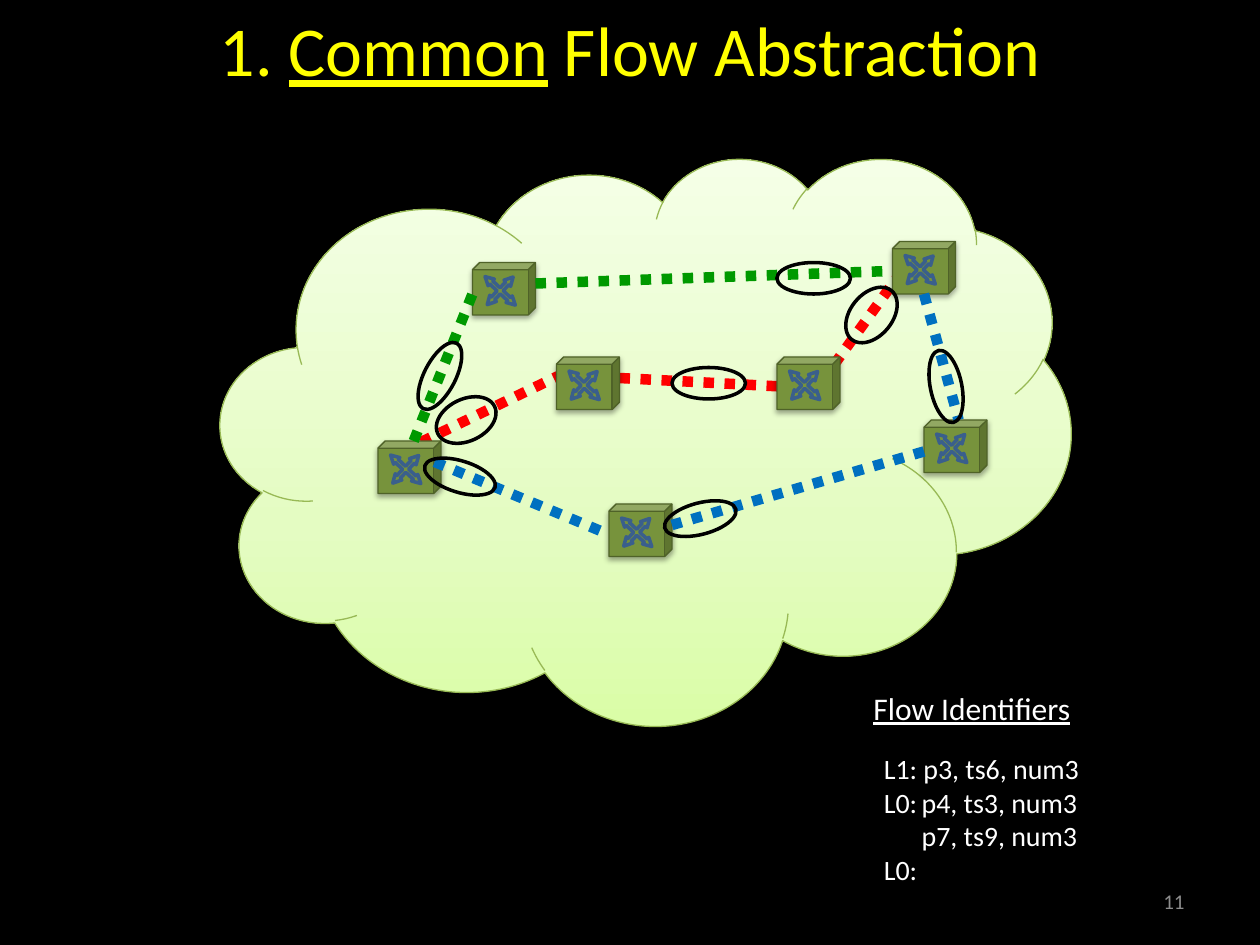
from lxml.etree import SubElement
from pptx import Presentation
from pptx.dml.color import RGBColor
from pptx.enum.dml import MSO_LINE
from pptx.enum.shapes import MSO_CONNECTOR, MSO_SHAPE
from pptx.enum.text import MSO_ANCHOR, PP_ALIGN
from pptx.oxml import parse_xml
from pptx.oxml.ns import nsdecls, qn
from pptx.util import Inches, Pt

# The slide is a grid of 120 columns by 90 rows, twelve to the inch.
COLUMNS, ROWS, PER_INCH = 120, 90, 12
FONT = "Calibri"
COLORS = {
    "background": "000000", "title": "FFFF00", "text": "FFFFFF", "number": "8C8C8C",
    "cloud_low": "DAFDA7", "cloud_mid": "E4FCC2", "cloud_high": "F5FFE7",
    "cloud_edge": "98B955", "switch": "77933C", "switch_edge": "4F6228",
    "arrows": "3A5F8C", "ring": "000000",
    "red": "FF0000", "green": "009900", "blue": "0070C0",
}
SWITCHES = [(36, 42), (85, 23), (74, 34), (53, 34), (45, 25), (58, 48), (88, 40)]
SWITCH_SIZE = (6, 5)
RED_LINKS = [
    ("red", (40.1, 42.1), (53.2, 35.8)),
    ("red", (59, 36), (74.2, 36.8)),
    ("red", (85.9, 25.8), (79.1, 35.2)),
]
OUTER_LINKS = [
    ("green", (39.4, 42), (45, 28)),
    ("blue", (41.4, 44), (58, 50.9)),
    ("green", (51, 27), (85, 25.8)),
    ("blue", (88, 43), (64, 50)),
    ("blue", (88, 28), (91.3, 40)),
]
NARROW, WIDE = (7, 3), (6, 4)
RINGS = [  # centre, size, rotation
    ((44.4, 40), WIDE, 334.5),
    ((67.5, 36.5), NARROW, 0),
    ((83, 30), WIDE, 309.3),
    ((77.5, 26.5), NARROW, 0),
    ((41.9, 35.8), NARROW, 297.1),
    ((90.1, 36.8), NARROW, 258.5),
    ((66.7, 49.4), NARROW, 345.3),
    ((43.8, 45.4), NARROW, 17.1),
]


def grid(*cells):
    return [Inches(cell / PER_INCH) for cell in cells]


def rgb(name):
    return RGBColor.from_string(COLORS[name])


def style_runs(frame, size, color):
    for paragraph in frame.paragraphs:
        for run in paragraph.runs:
            run.font.name, run.font.size = FONT, Pt(size)
            run.font.color.rgb = rgb(color)


def add_outlined(shapes, preset, box, edge, width, fill=None):
    shape = shapes.add_shape(preset, *grid(*box))
    shape.shadow.inherit = False
    if fill:
        shape.fill.solid()
        shape.fill.fore_color.rgb = rgb(fill)
    else:
        shape.fill.background()
    shape.line.color.rgb = rgb(edge)
    shape.line.width = Pt(width)
    return shape


def add_shadow(shape, opacity):
    effects = shape._element.spPr.find(qn("a:effectLst"))
    effects.append(parse_xml(
        f'<a:outerShdw {nsdecls("a")} blurRad="{Pt(3.1)}" dist="{Pt(1.7)}" dir="5400000" '
        f'rotWithShape="0"><a:srgbClr val="000000"><a:alpha val="{opacity * 1000}"/>'
        '</a:srgbClr></a:outerShdw>'))


def add_title(slide, box):
    title = slide.shapes.title
    title.left, title.top, title.width, title.height = grid(*box)
    frame = title.text_frame
    frame.vertical_anchor = MSO_ANCHOR.TOP
    heading = frame.paragraphs[0]
    heading.alignment = PP_ALIGN.CENTER
    for words in ("1. ", "Common", " Flow Abstraction"):
        run = heading.add_run()
        run.text = words
        run.font.underline = words == "Common"
    style_runs(frame, 40, "title")


def add_cloud(slide, box):
    cloud = add_outlined(slide.shapes, MSO_SHAPE.CLOUD, box, "cloud_edge", 0.75)
    cloud.fill.gradient()
    cloud.fill.gradient_angle = 90
    stops = cloud._element.spPr.find(qn("a:gradFill")).find(qn("a:gsLst"))
    for stop in list(stops):
        stops.remove(stop)
    for share, name in ((0, "cloud_low"), (35, "cloud_mid"), (100, "cloud_high")):
        stop = SubElement(stops, qn("a:gs"), pos=str(share * 1000))
        SubElement(stop, qn("a:srgbClr"), val=COLORS[name])
    add_shadow(cloud, 38)


def add_switch(slide, box):
    left, top, width, height = box
    group = slide.shapes.add_group_shape()
    cube = add_outlined(group.shapes, MSO_SHAPE.CUBE, box, "switch_edge", 0.75, "switch")
    cube.adjustments[0] = 0.138
    add_shadow(cube, 35)
    cross_box = (left + 0.11 * width, top + 0.18 * height, 0.66 * width, 0.72 * height)
    cross = add_outlined(group.shapes, MSO_SHAPE.QUAD_ARROW, cross_box, "arrows", 2)
    cross.rotation = 43.2
    for index, value in enumerate((0.113, 0.12, 0.225)):
        cross.adjustments[index] = value


def add_link(slide, color, start, end):
    link = slide.shapes.add_connector(MSO_CONNECTOR.STRAIGHT, *grid(*start, *end))
    link.line.color.rgb = rgb(color)
    link.line.width = Pt(6)
    link.line.dash_style = MSO_LINE.ROUND_DOT  # written as sysDot
    SubElement(link._element.spPr, qn("a:effectLst"))


def add_ring(slide, center, size, rotation):
    (x, y), (width, height) = center, size
    box = (x - width / 2, y - height / 2, width, height)
    add_outlined(slide.shapes, MSO_SHAPE.OVAL, box, "ring", 2).rotation = rotation


def add_network(slide, box):
    add_cloud(slide, box)
    for link in RED_LINKS:
        add_link(slide, *link)
    for corner in SWITCHES:
        add_switch(slide, corner + SWITCH_SIZE)
    for link in OUTER_LINKS:
        add_link(slide, *link)
    for ring in RINGS:
        add_ring(slide, *ring)


def add_text(slide, box, words, size, color):
    frame = slide.shapes.add_textbox(*grid(*box)).text_frame
    frame.word_wrap = True
    frame.text = words
    style_runs(frame, size, color)
    return frame


def add_identifiers(slide, box):
    left, top, width, height = box
    heading = add_text(slide, (left, top, width, 4.8), "Flow Identifiers", 18, "text")
    heading.paragraphs[0].runs[0].font.underline = True
    flows = add_text(slide, (left + 1, top + 6, width - 2, height - 6),
                     "L1: p3, ts6, num3\nL0:\tp4, ts3, num3\np7, ts9, num3\nL0:", 16, "text")
    for paragraph in flows.paragraphs:
        labelled = paragraph.text.startswith("L")
        properties = paragraph._p.get_or_add_pPr()
        properties.set("marL", str(Inches(0.3)))
        properties.set("indent", str(Inches(-0.3 if labelled else 0)))


def add_slide_number(slide, box):
    number = add_text(slide, box, "11", 12, "number")
    number.vertical_anchor = MSO_ANCHOR.MIDDLE
    number.paragraphs[0].alignment = PP_ALIGN.RIGHT


def main():
    deck = Presentation()
    deck.slide_width, deck.slide_height = grid(COLUMNS, ROWS)
    slide = deck.slides.add_slide(deck.slide_layouts[5])
    slide.background.fill.solid()
    slide.background.fill.fore_color.rgb = rgb("background")
    add_title(slide, (6, 0, 108, 8))
    add_network(slide, (21, 15, 81, 54))
    add_identifiers(slide, (82, 65, 32, 20))
    add_slide_number(slide, (86, 83.4, 28, 4.8))
    deck.save("out.pptx")


if __name__ == "__main__":
    main()
